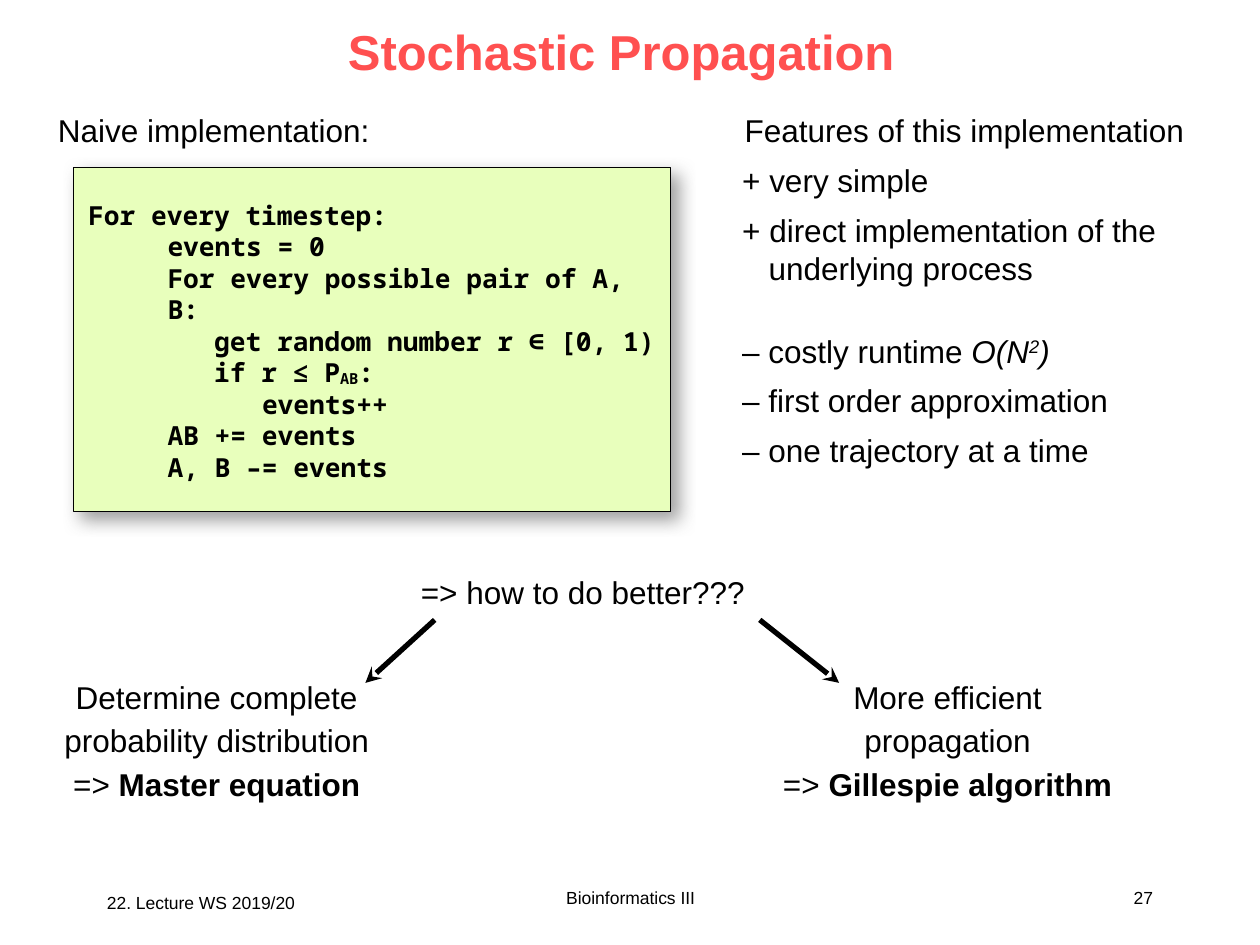
"""Build the Stochastic Propagation slide."""
from typing import NamedTuple

from lxml import etree
from pptx import Presentation
from pptx.dml.color import RGBColor
from pptx.enum.shapes import MSO_CONNECTOR, MSO_SHAPE
from pptx.enum.text import MSO_ANCHOR, MSO_AUTO_SIZE, PP_ALIGN
from pptx.oxml.ns import qn
from pptx.util import Inches, Pt

LEFT, CENTER, RIGHT = PP_ALIGN.LEFT, PP_ALIGN.CENTER, PP_ALIGN.RIGHT
TOP, MIDDLE = MSO_ANCHOR.TOP, MSO_ANCHOR.MIDDLE
BLACK = RGBColor(0x00, 0x00, 0x00)
CORAL = RGBColor(0xFF, 0x50, 0x50)
LIME = RGBColor(0xE8, 0xFF, 0xBC)
GRAY = RGBColor(0x80, 0x80, 0x80)


class Run(NamedTuple):
    text: str
    bold: bool = False
    italic: bool = False
    baseline: int = 0


class Para(NamedTuple):
    runs: list[Run]
    indent: float = 0
    hanging: float = 0
    before: float = 0


class Label(NamedTuple):
    x: float
    y: float
    w: float
    h: float
    paras: list[Para]
    align: PP_ALIGN = LEFT
    spacing: float | None = None
    wrap: bool = False


class Footer(NamedTuple):
    x: float
    y: float
    w: float
    text: str
    align: PP_ALIGN
    top: float


class Arrow(NamedTuple):
    tip: tuple[float, float]
    tail: tuple[float, float]


def line(text: str, **kw) -> Para:
    return Para([Run(text)], **kw)


def write(tf, paras: list[Para], *, font="Arial", size=18, color=BLACK, bold=False,
          align=LEFT, anchor=TOP, spacing=None, wrap=True, margins=(0, 0, 0, 0)) -> None:
    tf.auto_size = MSO_AUTO_SIZE.NONE
    tf.word_wrap = wrap
    tf.vertical_anchor = anchor
    tf.margin_left, tf.margin_top, tf.margin_right, tf.margin_bottom = map(Inches, margins)
    for i, para in enumerate(paras):
        p = tf.add_paragraph() if i else tf.paragraphs[0]
        p.alignment = align
        p.space_before = Pt(para.before)
        if spacing:
            p.line_spacing = Pt(spacing)
        pPr = p._p.get_or_add_pPr()
        pPr.set("marL", str(Inches(para.indent)))
        pPr.set("indent", str(Inches(-para.hanging)))
        etree.SubElement(pPr, qn("a:buNone"))
        for run in para.runs:
            r = p.add_run()
            r.text = run.text
            r.font.name, r.font.size = font, Pt(size)
            r.font.bold, r.font.italic = bold or run.bold, run.italic
            r.font.color.rgb = color
            if run.baseline:
                r._r.get_or_add_rPr().set("baseline", str(run.baseline * 1000))


def place(sp, x: float, y: float, w: float, h: float) -> None:
    sp.left, sp.top, sp.width, sp.height = map(Inches, (x, y, w, h))


def add_label(s, lb: Label) -> None:
    sp = s.shapes.add_textbox(*map(Inches, (lb.x, lb.y, lb.w, lb.h)))
    write(sp.text_frame, lb.paras, align=lb.align, spacing=lb.spacing, wrap=lb.wrap)


def add_footer(s, ft: Footer) -> None:
    sp = s.shapes.add_textbox(*map(Inches, (ft.x, ft.y, ft.w, 0.5)))
    write(sp.text_frame, [line(ft.text)], size=10, align=ft.align,
          margins=(0.1, ft.top, 0.1, 0.05))


def add_arrow(s, arrow: Arrow) -> None:
    cx = s.shapes.add_connector(MSO_CONNECTOR.STRAIGHT, *map(Inches, arrow.tail + arrow.tip))
    cx.line.color.rgb = BLACK
    cx.line.width = Pt(3)
    etree.SubElement(cx.line._get_or_add_ln(), qn("a:tailEnd"), type="stealth")
    etree.SubElement(cx._element.spPr, qn("a:effectLst"))


def add_code(s, paras: list[Para]) -> None:
    sp = s.shapes.add_shape(MSO_SHAPE.RECTANGLE, *map(Inches, (0.58, 1.33, 4.74, 2.73)))
    sp.fill.solid()
    sp.fill.fore_color.rgb = LIME
    sp.line.color.rgb = BLACK
    sp.line.width = Pt(0.5)
    sp.shadow.inherit = False
    effects = sp._element.spPr.find(qn("a:effectLst"))
    shadow = etree.SubElement(effects, qn("a:outerShdw"), blurRad=str(Pt(10)),
                              dist=str(Pt(6)), dir=str(45 * 60000), rotWithShape="0")
    clr = etree.SubElement(shadow, qn("a:srgbClr"), val=str(GRAY))
    etree.SubElement(clr, qn("a:alpha"), val="75000")
    write(sp.text_frame, paras, font="Noto Sans Mono", size=15, bold=True,
          margins=(0, 0.25, 0, 0))


CODE = [
    line("For every timestep:", indent=0.12),
    line("events = 0", indent=0.75),
    line("For every possible pair of A, B:", indent=0.75),
    line("get random number r ∈ [0, 1)", indent=1.12),
    Para([Run("if r ≤ P"), Run("AB", baseline=-6), Run(":")], indent=1.12),
    line("events++", indent=1.5),
    line("AB += events", indent=0.75),
    line("A, B –= events", indent=0.75),
]
ITEM = {"indent": 0.21, "hanging": 0.21, "before": 6.7}
FEATURES = [
    line("+ very simple", indent=0.21, hanging=0.21),
    line("+ direct implementation of the underlying process", **ITEM),
    Para([Run("– costly runtime "), Run("O(N", italic=True),
          Run("2", italic=True, baseline=32), Run(")", italic=True)],
         **{**ITEM, "before": 26}),
    line("– first order approximation", **ITEM),
    line("– one trajectory at a time", **ITEM),
]
LABELS = [
    Label(0.46, 0.88, 2.5, 0.3, [line("Naive implementation:")]),
    Label(5.91, 0.88, 3.52, 0.3, [line("Features of this implementation")]),
    Label(3.34, 4.55, 2.59, 0.3, [line("=> how to do better???")]),
    Label(0.5, 5.33, 2.44, 1.02,
          [line("Determine complete"), line("probability distribution"),
           Para([Run("=> "), Run("Master equation", bold=True)])], CENTER, 25),
    Label(6.13, 5.33, 2.78, 1.02,
          [line("More efficient propagation"),
           Para([Run("=> "), Run("Gillespie algorithm", bold=True)])], CENTER, 25, True),
]
ARROWS = [Arrow((2.9, 5.42), (3.45, 4.92)), Arrow((6.66, 5.42), (6.03, 4.92))]
FOOTERS = [
    Footer(0.75, 7.03, 2.08, "22. Lecture WS 2019/20", LEFT, 0.05),
    Footer(3.42, 6.83, 3.17, "Bioinformatics III", CENTER, 0.21),
    Footer(7.17, 6.83, 2.08, "27", RIGHT, 0.21),
]


def main() -> None:
    prs = Presentation()
    prs.slide_width, prs.slide_height = Inches(10), Inches(7.5)
    s = prs.slides.add_slide(prs.slide_layouts[1])
    title, body = s.placeholders
    place(title, 0.65, 0.06, 8.56, 0.69)
    write(title.text_frame, [line("Stochastic Propagation")], size=28, color=CORAL,
          bold=True, align=CENTER, anchor=MIDDLE, margins=(0.1, 0.05, 0.1, 0.05))
    place(body, 5.89, 1.28, 3.7, 2.4)
    write(body.text_frame, FEATURES)
    add_code(s, CODE)
    for label in LABELS:
        add_label(s, label)
    for arrow in ARROWS:
        add_arrow(s, arrow)
    for footer in FOOTERS:
        add_footer(s, footer)
    prs.save("out.pptx")


if __name__ == "__main__":
    main()
